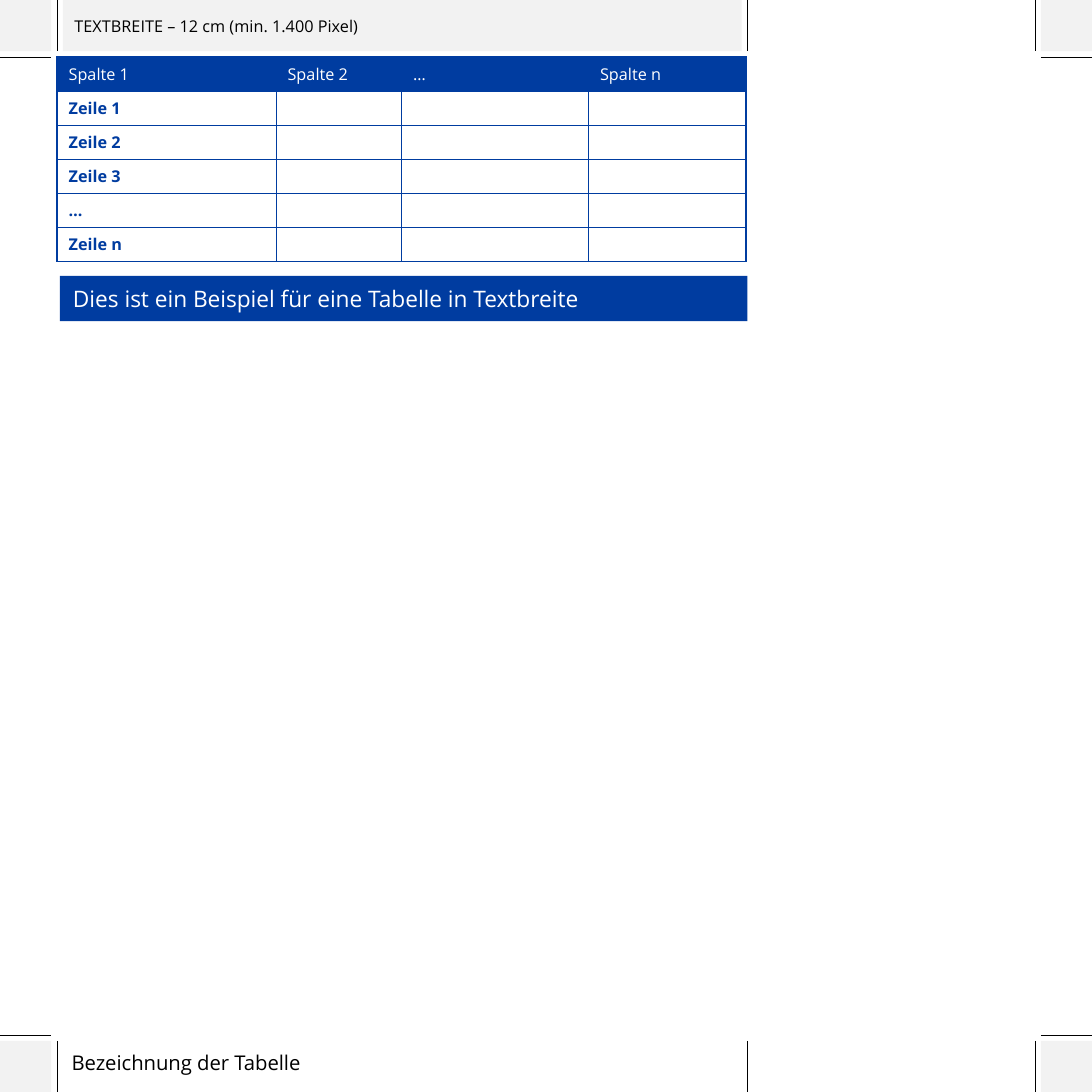
from dataclasses import dataclass
from itertools import product
from typing import Any

from lxml.etree import SubElement
from pptx import Presentation
from pptx.dml.color import RGBColor
from pptx.enum.shapes import MSO_CONNECTOR, MSO_SHAPE
from pptx.enum.text import MSO_ANCHOR, MSO_AUTO_SIZE, PP_ALIGN
from pptx.oxml.ns import qn
from pptx.util import Inches, Pt


@dataclass(frozen=True)
class Theme:
    font: str = "Open Sans"
    blue: str = "003CA0"
    gray: str = "F2F2F2"
    black: str = "000000"
    white: str = "FFFFFF"
    small: float = 8
    title: float = 10
    caption: float = 11.2
    thin: float = 0.25
    thick: float = 0.75


@dataclass(frozen=True)
class Block:
    left: float
    top: float
    width: float
    height: float
    fill: str
    text: str = ""
    size: float = 8
    color: str = "000000"
    inset: float = 0.08


@dataclass(frozen=True)
class Mark:
    x1: float
    y1: float
    x2: float
    y2: float


THEME = Theme()
SIDE = 7.48
MARK = 0.35
FAR = SIDE - MARK
EDGE = 0.39
FAR_EDGE = SIDE - EDGE
TEXT_EDGE = 5.12
COLUMN_WIDTHS = (1.5, 0.86, 1.28, 1.08)
ROW_HEIGHT = 0.23
HEADINGS = ("Spalte 1", "Spalte 2", "…", "Spalte n")
ROW_NAMES = ("Zeile 1", "Zeile 2", "Zeile 3", "…", "Zeile n")


def apply_format(target: Any, values: dict[str, Any]) -> None:
    for name, value in values.items():
        setattr(target, name, value)


def format_frame(frame: Any, horizontal: float, vertical: float) -> None:
    apply_format(frame, {
        "margin_left": Inches(horizontal), "margin_right": Inches(horizontal),
        "margin_top": Inches(vertical), "margin_bottom": Inches(vertical),
        "word_wrap": True, "vertical_anchor": MSO_ANCHOR.MIDDLE,
        "auto_size": MSO_AUTO_SIZE.NONE,
    })


def write(para: Any, text: str, size: float, color: str, bold: bool = False) -> None:
    para.alignment = PP_ALIGN.LEFT
    span = para.add_run()
    span.text = text
    apply_format(span.font, {"name": THEME.font, "size": Pt(size), "bold": bold})
    span.font.color.rgb = RGBColor.from_string(color)


def add_block(page: Any, block: Block) -> None:
    box = page.shapes.add_shape(
        MSO_SHAPE.RECTANGLE, Inches(block.left), Inches(block.top),
        Inches(block.width), Inches(block.height))
    box.shadow.inherit = False
    box.fill.solid()
    box.fill.fore_color.rgb = RGBColor.from_string(block.fill)
    box.line.fill.background()
    if block.text:
        format_frame(box.text_frame, block.inset, block.inset)
        write(box.text_frame.paragraphs[0], block.text, block.size, block.color)


def add_mark(page: Any, mark: Mark) -> None:
    line = page.shapes.add_connector(
        MSO_CONNECTOR.STRAIGHT, Inches(mark.x1), Inches(mark.y1),
        Inches(mark.x2), Inches(mark.y2))
    line.line.width = Pt(THEME.thin)
    line.line.color.rgb = RGBColor.from_string(THEME.black)
    SubElement(line._element.spPr, qn("a:effectLst"))


def add_border(cell: Any, side: str, width: float) -> None:
    properties = cell._tc.get_or_add_tcPr()
    line = SubElement(properties, qn(f"a:ln{side}"), w=str(int(Pt(width))))
    fill = SubElement(line, qn("a:solidFill"))
    SubElement(fill, qn("a:srgbClr"), val=THEME.blue)


def add_grid(page: Any) -> None:
    rows = [HEADINGS] + [(name, "", "", "") for name in ROW_NAMES]
    last_row, last_column = len(rows) - 1, len(HEADINGS) - 1
    table = page.shapes.add_table(
        len(rows), len(HEADINGS), Inches(EDGE), Inches(EDGE),
        Inches(sum(COLUMN_WIDTHS)), Inches(ROW_HEIGHT * len(rows))).table
    apply_format(table, {"first_row": False, "horz_banding": False})
    for column, width in zip(table.columns, COLUMN_WIDTHS):
        column.width = Inches(width)
    for r, c in product(range(len(rows)), range(len(HEADINGS))):
        cell = table.cell(r, c)
        apply_format(cell, {
            "margin_left": Inches(0.08), "margin_right": Inches(0.08),
            "margin_top": Inches(0.04), "margin_bottom": Inches(0.04),
        })
        # Outer frame and header rule are thicker than the inner lines
        thick_sides = {"L": c == 0, "R": c == last_column,
                       "T": r <= 1, "B": r in (0, last_row)}
        for side, thick in thick_sides.items():
            add_border(cell, side, THEME.thick if thick else THEME.thin)
        if r == 0:
            cell.fill.solid()
            cell.fill.fore_color.rgb = RGBColor.from_string(THEME.blue)
        else:
            cell.fill.background()
        para = cell.text_frame.paragraphs[0]
        if rows[r][c]:
            write(para, rows[r][c], THEME.small,
                  THEME.white if r == 0 else THEME.blue, bold=r > 0)
        else:
            # Empty cells keep the small type size so rows stay low
            end = SubElement(para._p, qn("a:endParaRPr"), sz=str(int(THEME.small * 100)))
            SubElement(end, qn("a:latin"), typeface=THEME.font)


def add_title(page: Any) -> None:
    title = page.shapes.title
    apply_format(title, {"left": Inches(EDGE), "top": Inches(FAR),
                         "width": Inches(4.72), "height": Inches(0.31)})
    format_frame(title.text_frame, 0.1, 0.05)
    para = title.text_frame.paragraphs[0]
    para.line_spacing = 0.9
    write(para, "Bezeichnung der Tabelle", THEME.title, THEME.black)


def main() -> None:
    deck = Presentation()
    apply_format(deck, {"slide_width": Inches(SIDE), "slide_height": Inches(SIDE)})
    page = deck.slides.add_slide(deck.slide_layouts[5])

    # Corner blocks and crop marks
    for left, top in product((0, FAR), repeat=2):
        add_block(page, Block(left, top, MARK, MARK, THEME.gray))
    for x, top in product((EDGE, TEXT_EDGE, FAR_EDGE), (0, FAR)):
        add_mark(page, Mark(x, top, x, top + MARK))
    for left, y in product((0, FAR), (EDGE, FAR_EDGE)):
        add_mark(page, Mark(left, y, left + MARK, y))

    # Width label, title, table and caption
    add_block(page, Block(0.43, 0, 4.65, MARK, THEME.gray,
                          "TEXTBREITE – 12 cm (min. 1.400 Pixel)", THEME.small))
    add_title(page)
    add_grid(page)
    add_block(page, Block(0.41, 1.89, 4.71, 0.31, THEME.blue,
                          "Dies ist ein Beispiel für eine Tabelle in Textbreite",
                          THEME.caption, THEME.white, 0.09))
    deck.save("out.pptx")


if __name__ == "__main__":
    main()
